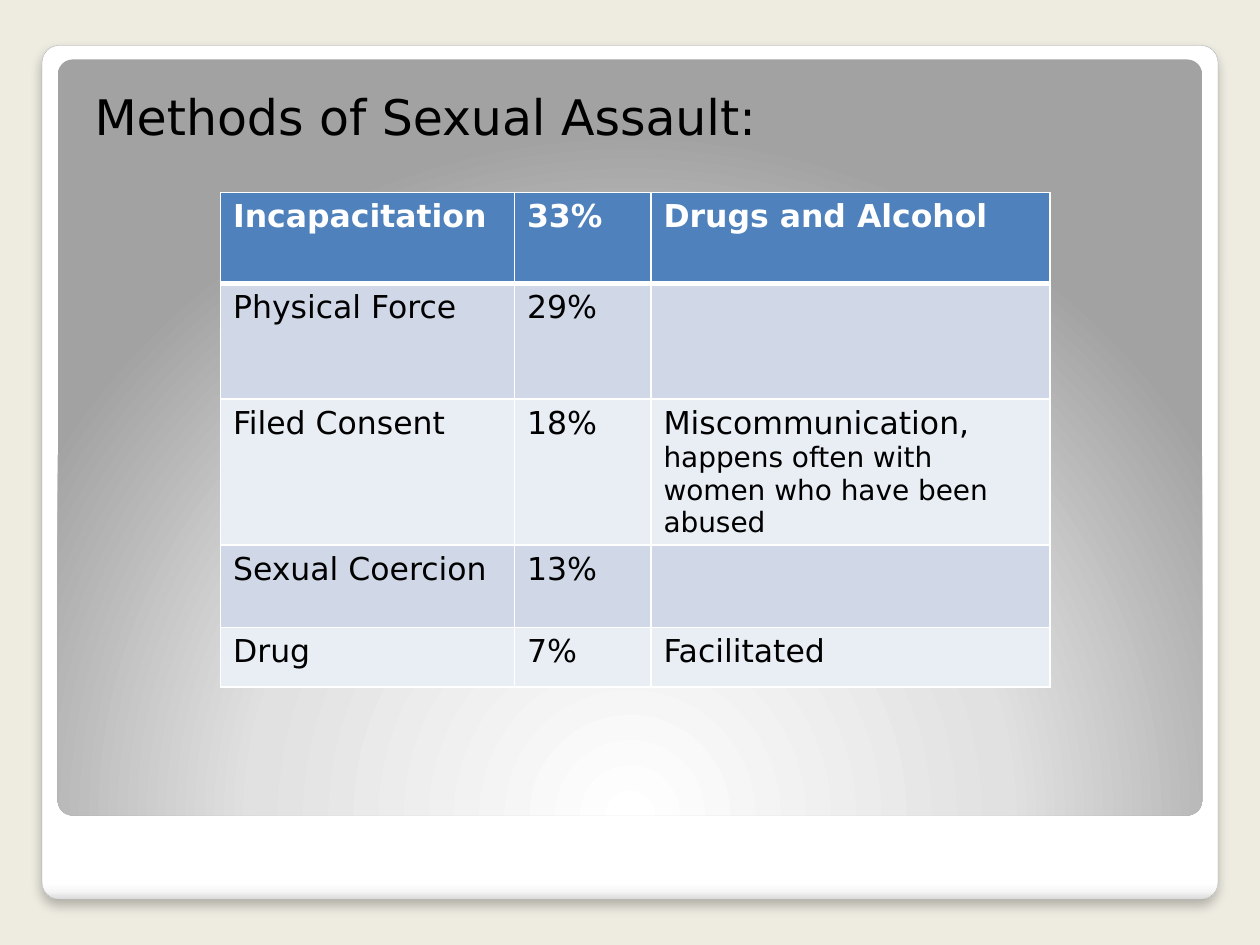
"""Build a slide with a table of methods of sexual assault."""
from pptx import Presentation
from pptx.dml.color import RGBColor
from pptx.enum.shapes import MSO_SHAPE
from pptx.enum.text import MSO_ANCHOR, MSO_AUTO_SIZE, PP_ALIGN
from pptx.oxml import parse_xml
from pptx.oxml.ns import nsdecls, qn
from pptx.util import Pt

ROUNDED = MSO_SHAPE.ROUNDED_RECTANGLE
TOP = MSO_ANCHOR.TOP
NO_FIT = MSO_AUTO_SIZE.NONE
LEFT = PP_ALIGN.LEFT

FONT = "DejaVu Sans"
BLACK, WHITE = "000000", "FFFFFF"
HEADER_FILL = "4F81BD"
BAND_FILLS = ["E9EDF4", "D0D8E8"]
COLUMN_WIDTHS = [168, 78, 228]
ROW_HEIGHTS = [52, 66, 60, 47, 34]
ROWS = [
    [["Incapacitation"], ["33%"], ["Drugs and Alcohol"]],
    [["Physical Force"], ["29%"], []],
    [["Filed Consent"], ["18%"],
     ["Miscommunication, ", "happens often with women who have been abused"]],
    [["Sexual Coercion"], ["13%"], []],
    [["Drug"], ["7%"], ["Facilitated"]],
]
RUN_SIZES = [18, 16]
LINEAR = '<a:lin ang="5400000" scaled="0"/>'
RADIAL = ('<a:path path="circle"><a:fillToRect l="50000" t="175000" '
          'r="50000" b="-75000"/></a:path>')


def rgb(color):
    """Return the colour for a hex string."""
    return RGBColor.from_string(color)


def format_run(r, size, color, bold=False):
    """Set the font of a run."""
    r.font.name = FONT
    r.font.size = Pt(size)
    r.font.bold = bold
    r.font.color.rgb = rgb(color)


def add_panel(s, box, stops, direction):
    """Add a rounded panel with a gradient and no line."""
    sp = s.shapes.add_shape(ROUNDED, *map(Pt, box))
    sp.adjustments[0] = 0.02
    sp.shadow.inherit = False
    sp.line.fill.background()
    sp.fill.background()
    marks = "".join(f'<a:gs pos="{pos * 1000}"><a:srgbClr val="{color}"/></a:gs>'
                    for pos, color in stops)
    gradient = parse_xml(f'<a:gradFill {nsdecls("a")} rotWithShape="1">'
                         f'<a:gsLst>{marks}</a:gsLst>{direction}</a:gradFill>')
    props = sp.element.spPr
    props.replace(props.find(qn("a:noFill")), gradient)
    return sp


def add_shadow(sp):
    """Give a shape a soft shadow below it."""
    effects = sp.element.spPr.find(qn("a:effectLst"))
    effects.append(parse_xml(
        f'<a:outerShdw {nsdecls("a")} blurRad="{Pt(6)}" dist="{Pt(4)}" '
        f'dir="5400000" algn="t" rotWithShape="0"><a:srgbClr val="{BLACK}">'
        '<a:alpha val="25000"/></a:srgbClr></a:outerShdw>'))


def set_title(s, text, box):
    """Place and format the title in front of the panels."""
    sp = s.shapes.title
    sp.element.getparent().append(sp.element)
    sp.left, sp.top, sp.width, sp.height = map(Pt, box)
    tf = sp.text_frame
    tf.text = text
    tf.word_wrap = True
    tf.auto_size = NO_FIT
    tf.vertical_anchor = TOP
    tf.margin_left, tf.margin_top = Pt(14.4), Pt(7.2)
    tf.margin_right, tf.margin_bottom = Pt(7.2), Pt(3.6)
    p = tf.paragraphs[0]
    p.alignment = LEFT
    format_run(p.runs[0], 28, BLACK)


def set_borders(cell, widths):
    """Draw white borders with the given width for each side."""
    props = cell._tc.get_or_add_tcPr()
    for side, width in widths.items():
        props.append(parse_xml(
            f'<a:ln{side} {nsdecls("a")} w="{Pt(width)}"><a:solidFill>'
            f'<a:srgbClr val="{WHITE}"/></a:solidFill></a:ln{side}>'))


def fill_cell(cell, texts, row):
    """Write and format one table cell."""
    header = row == 0
    set_borders(cell, {"L": 1, "R": 1, "T": 3 if row == 1 else 1,
                       "B": 3 if header else 1})
    cell.fill.solid()
    cell.fill.fore_color.rgb = rgb(HEADER_FILL if header else BAND_FILLS[row % 2])
    p = cell.text_frame.paragraphs[0]
    for text, size in zip(texts, RUN_SIZES):
        r = p.add_run()
        r.text = text
        format_run(r, size, WHITE if header else BLACK, header)


def add_methods_table(s, left, top):
    """Add the table of methods and their shares."""
    size = sum(COLUMN_WIDTHS), sum(ROW_HEIGHTS)
    table = s.shapes.add_table(len(ROWS), len(COLUMN_WIDTHS),
                               *map(Pt, (left, top, *size))).table
    for column, width in zip(table.columns, COLUMN_WIDTHS):
        column.width = Pt(width)
    for i, (row, height) in enumerate(zip(table.rows, ROW_HEIGHTS)):
        row.height = Pt(height)
        for cell, texts in zip(row.cells, ROWS[i]):
            fill_cell(cell, texts, i)


def main():
    """Build and save the slide."""
    prs = Presentation()
    prs.slide_width, prs.slide_height = Pt(720), Pt(540)
    s = prs.slides.add_slide(prs.slide_layouts[5])
    s.background.fill.solid()
    s.background.fill.fore_color.rgb = rgb("EEECE1")
    frame = add_panel(s, (24, 26, 672, 488),
                      [(0, WHITE), (98, WHITE), (99, "F7F7F7"), (100, "DADADA")],
                      LINEAR)
    frame.line.color.rgb = rgb("A4A4A4")
    frame.line.width = Pt(0.16)
    add_shadow(frame)
    add_panel(s, (33, 34, 654, 432),
              [(0, WHITE), (55, "E1E1E1"), (100, "A2A2A2")], RADIAL)
    set_title(s, "Methods of Sexual Assault:", (39.6, 42, 644.4, 384.5))
    add_methods_table(s, 126, 110)
    prs.save("out.pptx")


if __name__ == "__main__":
    main()
